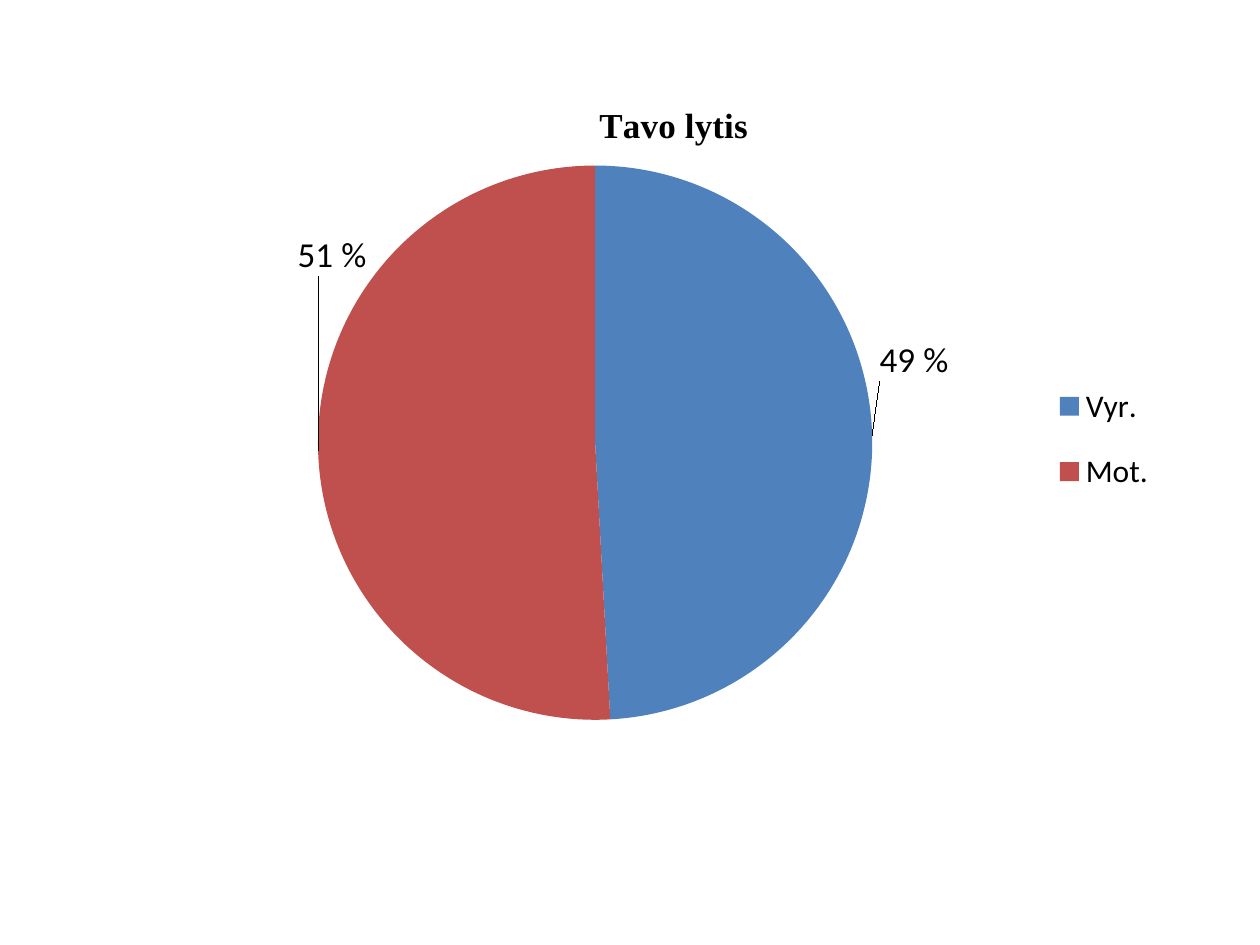
from lxml.etree import SubElement
from pptx import Presentation
from pptx.chart.data import CategoryChartData
from pptx.dml.color import RGBColor
from pptx.enum.chart import XL_CHART_TYPE, XL_LABEL_POSITION, XL_LEGEND_POSITION
from pptx.oxml.ns import qn
from pptx.util import Inches, Pt

COLORS = {"text": "000000", "Vyr.": "4F81BD", "Mot.": "C0504D"}
TITLE = "Tavo lytis"
SLICES = [
    ("Vyr.", 337, "49 %", (0, -0.1)),
    ("Mot.", 349, "51 %", (0.055, -0.26)),
]
WIDTH, HEIGHT = Inches(10), Inches(7.5)
FRAME = (0.122, 0.07, 0.811, 0.797)
PLOT = (0.058, 0.132, 0.748, 0.736)
LEGEND = (0.87, 0.39, 0.12, 0.21)
TITLE_AT = (0.43, 0.04)


def style(font, size, name="Calibri", bold=False):
    font.name, font.size, font.bold = name, Pt(size), bold
    font.color.rgb = RGBColor.from_string(COLORS["text"])


def place(parent, after, shares, mode="edge", inner=False):
    for old in parent.findall(qn("c:layout")):
        parent.remove(old)
    layout = SubElement(parent, qn("c:layout"))
    manual = SubElement(layout, qn("c:manualLayout"))
    if inner:
        SubElement(manual, qn("c:layoutTarget")).set("val", "inner")
    if mode == "edge":
        for tag in ("xMode", "yMode"):
            SubElement(manual, qn(f"c:{tag}")).set("val", mode)
    for tag, share in zip("xywh", shares):
        SubElement(manual, qn(f"c:{tag}")).set("val", str(share))
    if after:
        parent.find(qn(after)).addnext(layout)
    else:
        parent.insert(0, layout)


prs = Presentation()
prs.slide_width, prs.slide_height = WIDTH, HEIGHT
s = prs.slides.add_slide(prs.slide_layouts[6])

data = CategoryChartData()
data.categories = [name for name, *_ in SLICES]
data.add_series("Series 1", [value for _, value, *_ in SLICES])
x, y, w, h = (int(f * side) for f, side in zip(FRAME, (WIDTH, HEIGHT) * 2))
chart = s.shapes.add_chart(XL_CHART_TYPE.PIE, x, y, w, h, data).chart
style(chart.font, 10)

chart.has_title = True
tf = chart.chart_title.text_frame
tf.text = TITLE
style(tf.paragraphs[0].runs[0].font, 20, "Times New Roman", True)
place(chart.chart_title._element, "c:tx", TITLE_AT)

chart.has_legend = True
chart.legend.position = XL_LEGEND_POSITION.RIGHT
chart.legend.include_in_layout = False
style(chart.legend.font, 18)
place(chart.legend._element, "c:legendPos", LEGEND)

plot = chart.plots[0]
plot.vary_by_categories = True
place(plot._element.getparent(), None, PLOT, inner=True)
series = plot.series[0]
labels = series.data_labels
labels.show_value = True
labels.position = XL_LABEL_POSITION.OUTSIDE_END
style(labels.font, 20)

for i, (name, _, share, shift) in enumerate(SLICES):
    point = series.points[i]
    point.format.fill.solid()
    point.format.fill.fore_color.rgb = RGBColor.from_string(COLORS[name])
    label = point.data_label
    label.text_frame.text = share
    style(label.text_frame.paragraphs[0].runs[0].font, 20)
    label.position = XL_LABEL_POSITION.OUTSIDE_END
    place(labels._element.findall(qn("c:dLbl"))[i], "c:idx", shift, mode="factor")

prs.save("out.pptx")
